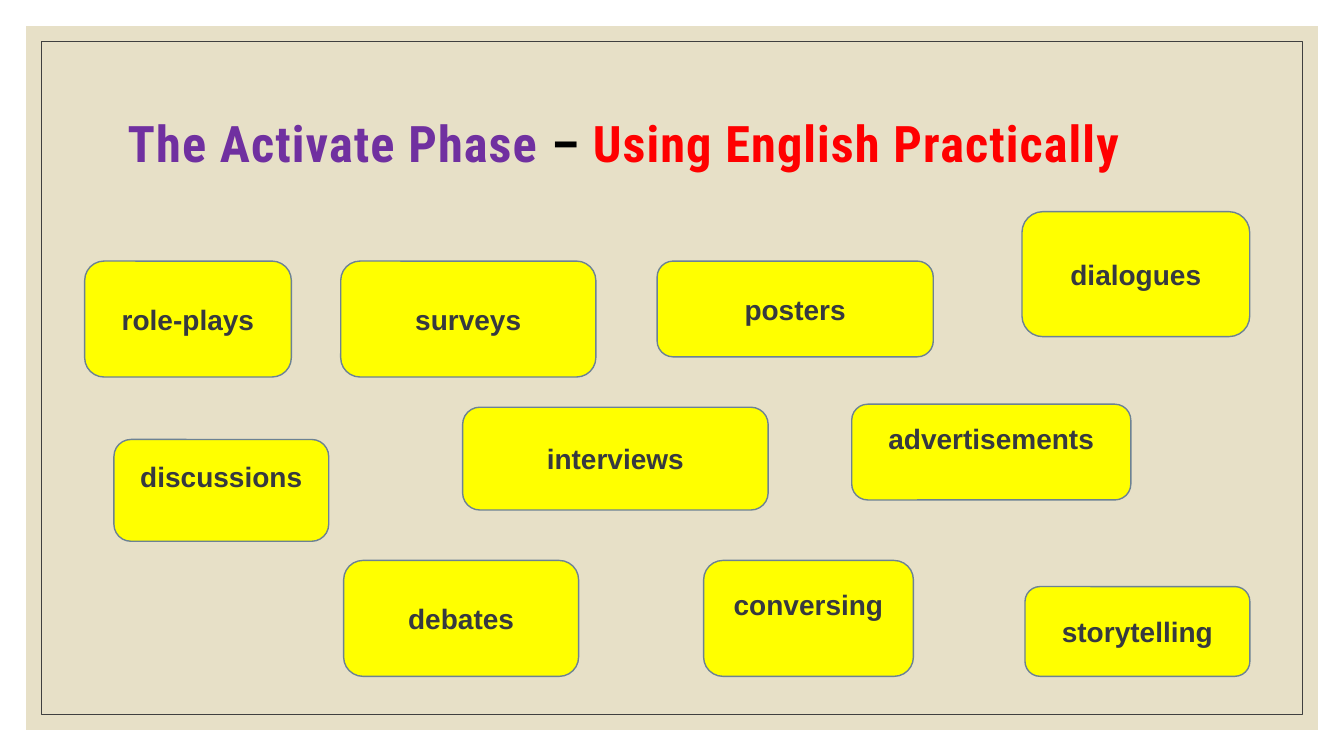
from pptx import Presentation
from pptx.dml.color import RGBColor
from pptx.enum import shapes, text
from pptx.util import Pt

PAGE_WIDTH, PAGE_HEIGHT = 960, 540
MARGIN, BORDER_MARGIN = 18.7, 29.5
SAND, BORDER, YELLOW, SLATE, INK = "E7E0C7", "404040", "FFFF00", "6C8294", "363940"

TITLE = [("The Activate Phase ", "7030A0"), ("– ", "000000"),
         ("Using English Practically", "FF0000")]

# Word, box (left, top, width, height), extra room below the word
ACTIVITIES = [
    ("role-plays", (60.5, 186.5, 147.6, 82.8), 0),
    ("surveys", (243.4, 186.5, 182.2, 82.8), 0),
    ("posters", (469.4, 186.5, 197.3, 68.4), 0),
    ("dialogues", (730, 151.2, 162.7, 89.3), 0),
    ("discussions", (81.4, 313.9, 153.4, 72.7), 20),
    ("interviews", (330.5, 290.9, 218.2, 73.4), 0),
    ("advertisements", (608.4, 288.7, 199.4, 68.4), 20),
    ("debates", (245.5, 400.3, 167.8, 82.8), 0),
    ("conversing", (502.6, 400.3, 149.8, 82.8), 20),
    ("storytelling", (732.2, 419, 160.6, 64.1), 0),
]


def color(value):
    return RGBColor.from_string(value)


def add_box(page, kind, box, fill=None, line=None, weight=1):
    shape = page.shapes.add_shape(kind, *map(Pt, box))
    shape.shadow.inherit = False
    if fill:
        shape.fill.solid()
        shape.fill.fore_color.rgb = color(fill)
    else:
        shape.fill.background()
    if line:
        shape.line.color.rgb = color(line)
        shape.line.width = Pt(weight)
    else:
        shape.line.fill.background()
    return shape


def add_span(para, words, font, size, ink):
    span = para.add_run()
    span.text = words
    span.font.name = font
    span.font.size = Pt(size)
    span.font.bold = True
    span.font.color.rgb = color(ink)
    return span


def add_background(page, box):
    left, top, width, height = box
    for margin, fill, line in ((MARGIN, SAND, None), (BORDER_MARGIN, None, BORDER)):
        inner = (left + margin, top + margin, width - 2 * margin, height - 2 * margin)
        add_box(page, shapes.MSO_SHAPE.RECTANGLE, inner, fill, line, 0.5)


def add_title(page, box):
    frame = page.shapes.add_textbox(*map(Pt, box)).text_frame
    frame.word_wrap = True
    frame.vertical_anchor = text.MSO_ANCHOR.MIDDLE
    para = frame.paragraphs[0]
    para.line_spacing = 0.9
    for words, ink in TITLE:
        span = add_span(para, words, "Roboto Condensed", 36, ink)
        span.font._element.set("spc", "80")  # letter spacing of 0.8 pt


def add_activity(page, box, word, room_below):
    shape = add_box(page, shapes.MSO_SHAPE.ROUNDED_RECTANGLE, box, YELLOW, SLATE)
    frame = shape.text_frame
    frame.word_wrap = True
    frame.vertical_anchor = text.MSO_ANCHOR.MIDDLE
    frame.margin_bottom = Pt(3.6 + room_below)
    para = frame.paragraphs[0]
    para.alignment = text.PP_ALIGN.CENTER
    add_span(para, word, "Arial", 20, INK)


def main():
    deck = Presentation()
    deck.slide_width, deck.slide_height = Pt(PAGE_WIDTH), Pt(PAGE_HEIGHT)
    page = deck.slides.add_slide(deck.slide_layouts[6])

    add_background(page, (0, 0, PAGE_WIDTH, PAGE_HEIGHT))
    add_title(page, (84.2, 50.4, 792, 108))
    for word, box, room_below in ACTIVITIES:
        add_activity(page, box, word, room_below)

    deck.save("out.pptx")


if __name__ == "__main__":
    main()
